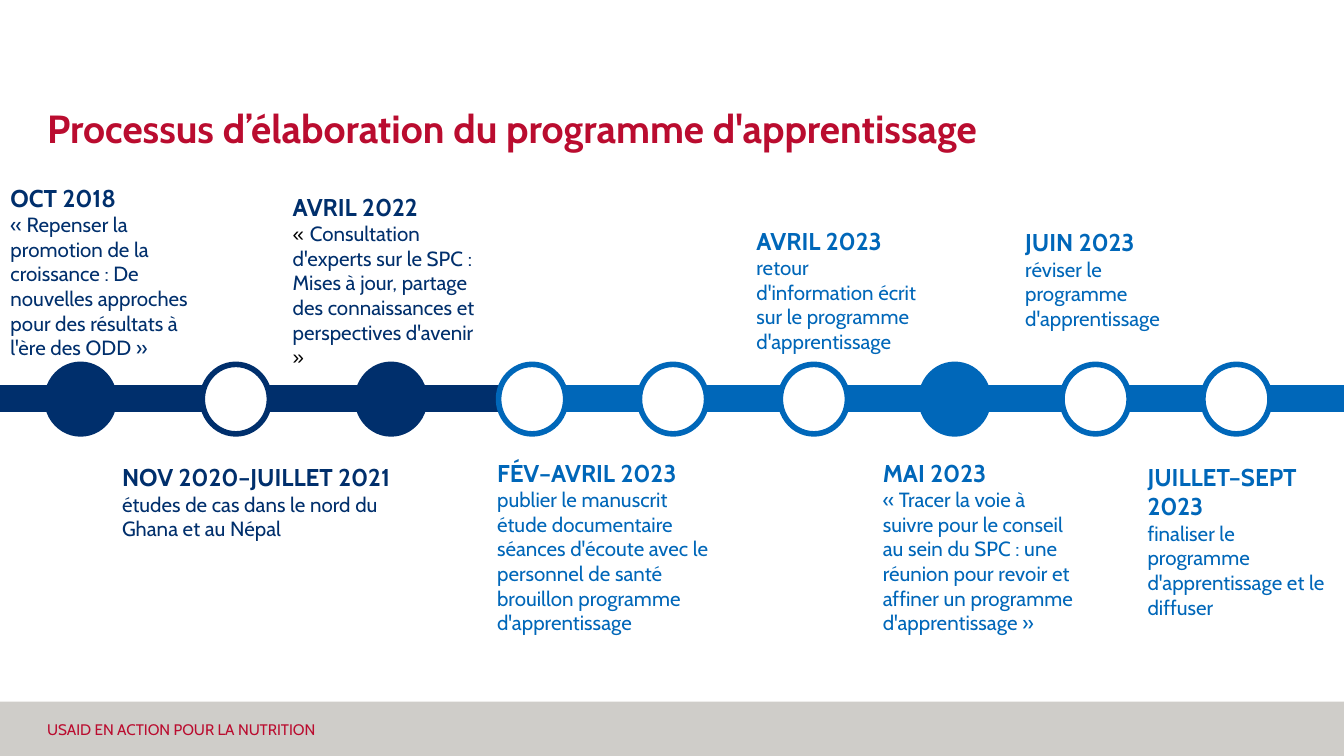
from pptx import Presentation
from pptx.dml.color import RGBColor
from pptx.enum.shapes import MSO_SHAPE
from pptx.enum.text import MSO_ANCHOR
from pptx.util import Inches, Pt

RECTANGLE, OVAL = MSO_SHAPE.RECTANGLE, MSO_SHAPE.OVAL
BOTTOM = MSO_ANCHOR.BOTTOM

NAVY = RGBColor(0x00, 0x2F, 0x6C)
BLUE = RGBColor(0x00, 0x67, 0xB9)
RED = RGBColor(0xBA, 0x0C, 0x2F)
GRAY = RGBColor(0xCF, 0xCD, 0xC9)
WHITE = RGBColor(0xFF, 0xFF, 0xFF)
BLACK = RGBColor(0x00, 0x00, 0x00)
FONT, QUOTE_FONT = "Cabin", "Arial"

deck = Presentation()
deck.slide_width, deck.slide_height = Inches(10), Inches(5.625)
page = deck.slides.add_slide(deck.slide_layouts[6])

# The page is a grid of 100 columns by 100 rows
COLUMN, ROW = deck.slide_width / 100, deck.slide_height / 100


def add_figure(kind, left, top, width, height, fill, line, line_width):
    figure = page.shapes.add_shape(kind, int(left * COLUMN), int(top * ROW),
                                   int(width * COLUMN), int(height * ROW))
    figure.shadow.inherit = False
    figure.fill.solid()
    figure.fill.fore_color.rgb = fill
    if line_width:
        figure.line.color.rgb = line
        figure.line.width = Pt(line_width)
    else:
        figure.line.fill.background()


def add_text(left, top, width, height, margins, paragraphs):
    """Each paragraph is (spans, size, bold, color)."""
    box = page.shapes.add_textbox(int(left * COLUMN), int(top * ROW),
                                  int(width * COLUMN), int(height * ROW))
    frame = box.text_frame
    frame.word_wrap = True
    (frame.margin_left, frame.margin_top,
     frame.margin_right, frame.margin_bottom) = map(Inches, margins)
    for index, (spans, size, bold, color) in enumerate(paragraphs):
        para = frame.add_paragraph() if index else frame.paragraphs[0]
        para.font.name, para.font.size = FONT, Pt(size)
        para.font.bold, para.font.color.rgb = bold, color
        for text in spans:
            span = para.add_run()
            span.text = text
            # Guillemets that stand alone are black
            if text.strip() in ("«", "»"):
                span.font.name, span.font.color.rgb = QUOTE_FONT, BLACK
    return frame


# Footer and title
add_figure(RECTANGLE, 0, 92.8, 100, 7.2, GRAY, GRAY, 0)
add_text(3.5, 94.6, 40.8, 3.7, (0, 0.04, 0.07, 0.04),
         [(["USAID EN ACTION POUR LA NUTRITION"], 8.2, False, RED)])
title = add_text(3.5, 6.7, 93.2, 13.3, (0, 0, 0, 0),
                 [(["Processus d’élaboration du programme d'apprentissage"], 21, True, RED)])
title.vertical_anchor = BOTTOM

# Timeline bars
for left, width, color in [(41.2, 58.8, BLUE), (0, 39.6, NAVY)]:
    add_figure(RECTANGLE, left, 51, width, 3.4, color, color, 0.75)

# Milestone circles: three wide steps, then six narrower ones
circles = [(3.5 + 11.55 * step, NAVY) for step in range(3)]
circles += [(37.1 + 10.48 * step, BLUE) for step in range(6)]
FILLED = (0, 2, 6)
for index, (left, color) in enumerate(circles):
    add_figure(OVAL, left, 48.2, 5, 9.2, color if index in FILLED else WHITE, color, 3)

# Milestones: left, top, width, height, color, date, body paragraphs as spans
milestones = [
    (-0.2, 22.4, 15.3, 17.6, NAVY, "OCT 2018",
     [["« Repenser la promotion de la croissance : De nouvelles approches "
       "pour des résultats à l'ère des ODD »"]]),
    (8.1, 59.4, 22, 15.6, NAVY, "NOV 2020–JUILLET 2021",
     [["études de cas dans le nord du Ghana et au Népal"]]),
    (20.8, 23.6, 16.4, 22.6, NAVY, "AVRIL 2022",
     [["« ", "Consultation d'experts sur le SPC : Mises à jour, partage "
       "des connaissances et perspectives d'avenir ", "»"]]),
    (36, 58.8, 22.9, 22.6, BLUE, "FÉV–AVRIL 2023",
     [["publier le manuscrit"], ["étude documentaire"],
      ["séances d'écoute avec le personnel de santé"],
      ["brouillon programme d'apprentissage"]]),
    (55.3, 28.1, 14, 15.6, BLUE, "AVRIL 2023",
     [["retour d'information écrit sur le programme d'apprentissage"]]),
    (64.7, 58.8, 16.4, 22.6, BLUE, "MAI 2023",
     [["« Tracer la voie à suivre pour le conseil au sein du SPC : une réunion "
       "pour revoir et affiner un programme d'apprentissage »"]]),
    (75.3, 28.3, 12.6, 14.4, BLUE, "JUIN 2023",
     [["réviser le programme d'apprentissage"]]),
    (84.4, 59.4, 16.4, 22.6, BLUE, "JUILLET–SEPT 2023",
     [["finaliser le programme d'apprentissage et le diffuser"]]),
]
for left, top, width, height, color, date, body in milestones:
    paragraphs = [([date], 13, True, color)]
    paragraphs += [(spans, 11, False, color) for spans in body]
    add_text(left, top, width, height, (0.1, 0.1, 0.1, 0.1), paragraphs)

deck.save("out.pptx")
